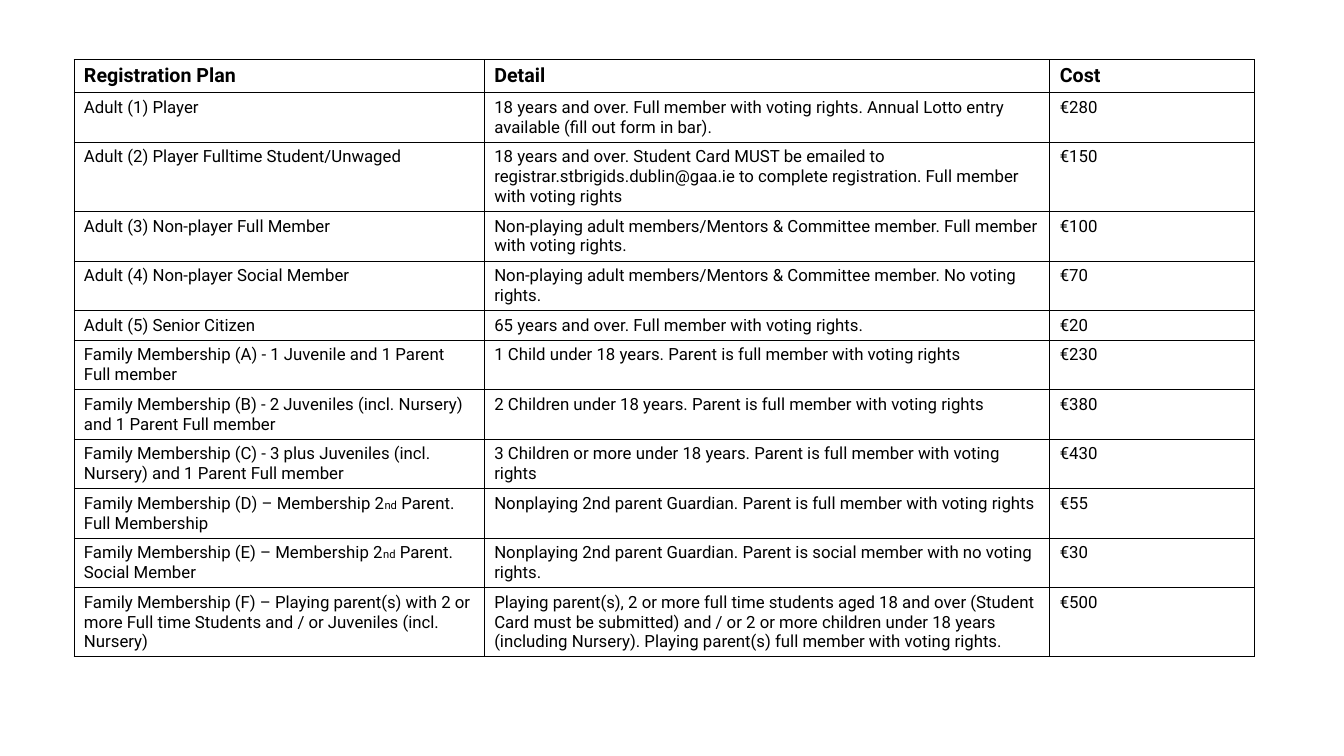
import pptx
import pptx.dml.color
import pptx.oxml
import pptx.oxml.ns
import pptx.util


def rgb(value):
    return pptx.dml.color.RGBColor.from_string(value)


class Deck:
    font = "Roboto"
    ink = "000000"
    paper = "FFFFFF"
    head_size = 14
    body_size = 12
    ordinal_size = 8
    border = 0.57

    def __init__(self):
        self.prs = pptx.Presentation()
        self.prs.slide_width = pptx.util.Inches(13.33)
        self.prs.slide_height = pptx.util.Inches(7.5)
        self.slide = self.prs.slides.add_slide(self.prs.slide_layouts[6])

    def x(self, percent):
        return int(self.prs.slide_width * percent / 100)

    def y(self, percent):
        return int(self.prs.slide_height * percent / 100)

    def run(self, p, text, size, bold):
        r = p.add_run()
        r.text = text
        r.font.name = self.font
        r.font.size = pptx.util.Pt(size)
        r.font.bold = bold
        r.font.color.rgb = rgb(self.ink)

    def borders(self, cell):
        tc_pr = cell._tc.get_or_add_tcPr()
        for i, side in enumerate(("lnL", "lnR", "lnT", "lnB")):
            tc_pr.insert(i, pptx.oxml.parse_xml(
                f'<a:{side} {pptx.oxml.ns.nsdecls("a")} w="{pptx.util.Pt(self.border)}">'
                f'<a:solidFill><a:srgbClr val="{self.ink}"/></a:solidFill></a:{side}>'))

    def cell(self, cell, content, header):
        cell.fill.solid()
        cell.fill.fore_color.rgb = rgb(self.paper)
        self.borders(cell)
        p = cell.text_frame.paragraphs[0]
        size = self.head_size if header else self.body_size
        runs = [content] if isinstance(content, str) else content
        for i, text in enumerate(runs):
            self.run(p, text, self.ordinal_size if i == 1 else size, header)

    def table(self, left, top, widths, heights, rows):
        frame = self.slide.shapes.add_table(
            len(rows), len(widths), self.x(left), self.y(top),
            self.x(sum(widths)), self.y(sum(heights)))
        table = frame.table
        table.first_row = False
        table.horz_banding = False
        for column, width in zip(table.columns, widths):
            column.width = self.x(width)
        for i, (row, height) in enumerate(zip(rows, heights)):
            table.rows[i].height = self.y(height)
            for j, content in enumerate(row):
                self.cell(table.cell(i, j), content, i == 0)


HEADER = ("Registration Plan", "Detail", "Cost")
PLANS = [
    (2, "Adult (1) Player",
     "18 years and over. Full member with voting rights. Annual Lotto entry available "
     "(fill out form in bar).", "€280"),
    (3, "Adult (2) Player Fulltime Student/Unwaged",
     "18 years and over. Student Card MUST be emailed to registrar.stbrigids.dublin@gaa.ie "
     "to complete registration. Full member with voting rights", "€150"),
    (2, "Adult (3) Non-player Full Member",
     "Non-playing adult members/Mentors & Committee member. Full member with voting rights.",
     "€100"),
    (2, "Adult (4) Non-player Social Member",
     "Non-playing adult members/Mentors & Committee member. No voting rights.", "€70"),
    (1, "Adult (5) Senior Citizen",
     "65 years and over. Full member with voting rights.", "€20"),
    (2, "Family Membership (A) - 1 Juvenile and 1 Parent Full member",
     "1 Child under 18 years. Parent is full member with voting rights", "€230"),
    (2, "Family Membership (B) - 2 Juveniles (incl. Nursery) and 1 Parent Full member",
     "2 Children under 18 years. Parent is full member with voting rights", "€380"),
    (2, "Family Membership (C) - 3 plus Juveniles (incl. Nursery) and 1 Parent Full member",
     "3 Children or more under 18 years. Parent is full member with voting rights", "€430"),
    (2, ("Family Membership (D) – Membership 2", "nd", " Parent. Full Membership"),
     "Nonplaying 2nd parent Guardian. Parent is full member with voting rights", "€55"),
    (2, ("Family Membership (E) – Membership 2", "nd", " Parent. Social Member"),
     "Nonplaying 2nd parent Guardian. Parent is social member with no voting rights.", "€30"),
    (3, "Family Membership (F) – Playing parent(s) with 2 or more Full time Students "
     "and / or Juveniles (incl. Nursery)",
     "Playing parent(s), 2 or more full time students aged 18 and over (Student Card must be "
     "submitted) and / or 2 or more children under 18 years (including Nursery). "
     "Playing parent(s) full member with voting rights.", "€500"),
]
PADDING, LINE, HEADER_HEIGHT = 1.33, 2.6, 4.37


def main():
    deck = Deck()
    heights = [HEADER_HEIGHT] + [PADDING + LINE * lines for lines, *_ in PLANS]
    rows = [HEADER] + [plan for _, *plan in PLANS]
    deck.table(5.5, 7.87, (30.53, 42.08, 15.23), heights, rows)
    deck.prs.save("out.pptx")


if __name__ == "__main__":
    main()
